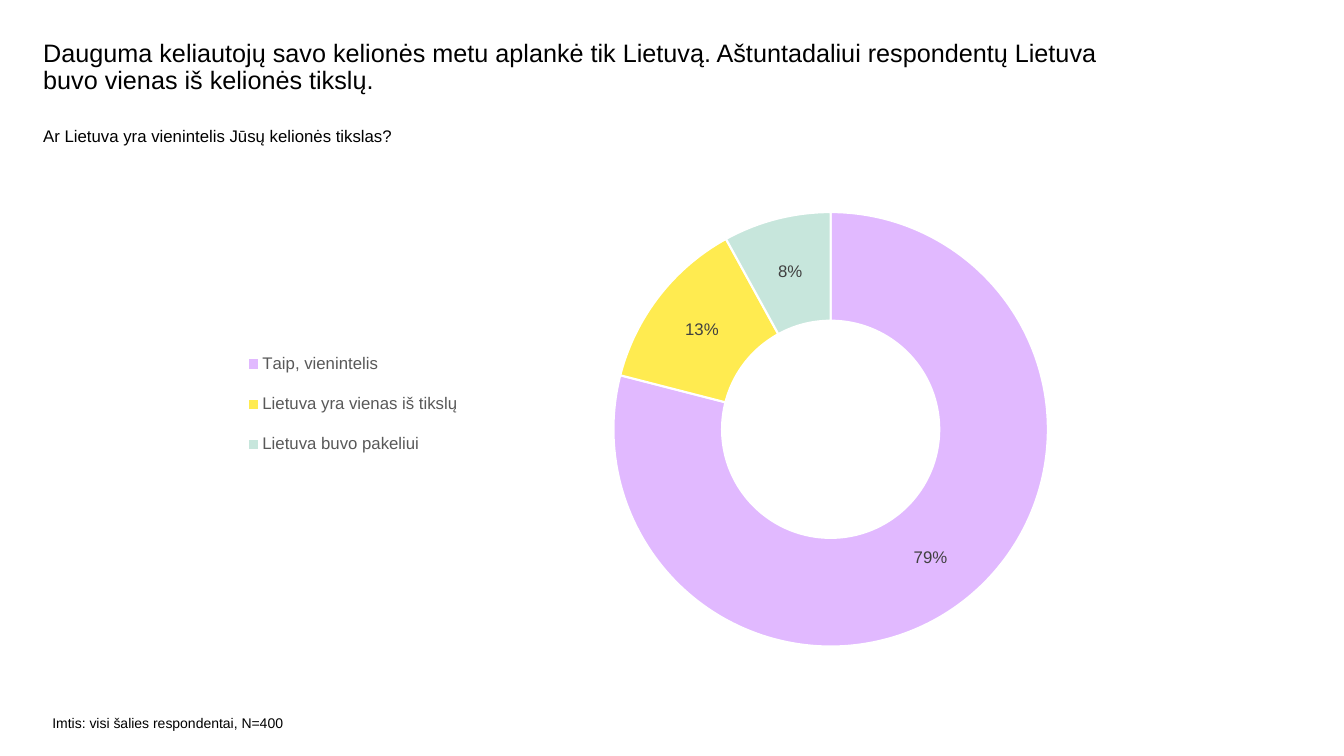
from lxml import etree
from pptx import Presentation
from pptx import util as u
from pptx.chart.data import CategoryChartData
from pptx.dml.color import RGBColor
from pptx.enum import chart as ch
from pptx.oxml.ns import qn

# Content: text, (left, top, width, height) in cm, size in points, line spacing
FONT = "Arial"
COLORS = {"text": "000000", "legend": "595959", "label": "404040", "gap": "FFFFFF"}
TEXTS = [
    ("Dauguma keliautojų savo kelionės metu aplankė tik Lietuvą. "
     "Aštuntadaliui respondentų Lietuva buvo vienas iš kelionės tikslų.",
     (1.09, 1.02, 27.64, 1.52), 18, 0.9),
    ("Ar Lietuva yra vienintelis Jūsų kelionės tikslas?",
     (1.09, 3.18, 30.2, 1.55), 12, 1.0),
    ("Imtis: visi šalies respondentai, N=400",
     (1.32, 18.01, 6.43, 0.61), 10, 1.0),
]
ANSWERS = [
    ("Taip, vienintelis", 0.79, "E1B9FF"),
    ("Lietuva yra vienas iš tikslų", 0.13, "FFEB50"),
    ("Lietuva buvo pakeliui", 0.08, "C7E6DC"),
]
CHART_BOX = (4.19, 5.03, 24.77, 11.58)
# Shares of the chart area: x, y, w, h
PLOT_LAYOUT = (0.455, 0, 0.442, 1)
LEGEND_LAYOUT = (0.075, 0.29, 0.23, 0.31)


def style(font, size, color):
    font.name = FONT
    font.size = u.Pt(size)
    font.color.rgb = RGBColor.from_string(COLORS[color])


def place(element, before, box, inner=False):
    """Give a chart part a manual layout, inserted ahead of the named tag."""
    for old in element.findall(qn("c:layout")):
        element.remove(old)
    layout = etree.Element(qn("c:layout"))
    manual = etree.SubElement(layout, qn("c:manualLayout"))
    settings = [("layoutTarget", "inner")] if inner else []
    settings += [("xMode", "edge"), ("yMode", "edge"), *zip("xywh", box)]
    for name, value in settings:
        etree.SubElement(manual, qn(f"c:{name}")).set("val", str(value))
    element.find(qn(before)).addprevious(layout)


presentation = Presentation()
presentation.slide_width = u.Cm(33.87)
presentation.slide_height = u.Cm(19.05)
slide = presentation.slides.add_slide(presentation.slide_layouts[6])

# Title, question and sample note
for content, box, size, spacing in TEXTS:
    frame = slide.shapes.add_textbox(*map(u.Cm, box)).text_frame
    frame.word_wrap = True
    frame.margin_left = frame.margin_right = frame.margin_top = frame.margin_bottom = 0
    frame.text = content
    paragraph = frame.paragraphs[0]
    paragraph.line_spacing = spacing
    style(paragraph.runs[0].font, size, "text")

# Doughnut chart
data = CategoryChartData(number_format="0%")
data.categories = [name for name, _, _ in ANSWERS]
data.add_series("Series 1", [share for _, share, _ in ANSWERS])
chart = slide.shapes.add_chart(
    ch.XL_CHART_TYPE.DOUGHNUT, *map(u.Cm, CHART_BOX), data).chart
chart.has_title = False
style(chart.font, 10, "text")

plot = chart.plots[0]
plot.vary_by_categories = True
plot._element.find(qn("c:holeSize")).set("val", "50")
series = plot.series[0]
for index, (_, _, color) in enumerate(ANSWERS):
    slice_format = series.points[index].format
    slice_format.fill.solid()
    slice_format.fill.fore_color.rgb = RGBColor.from_string(color)
    slice_format.line.color.rgb = RGBColor.from_string(COLORS["gap"])
    slice_format.line.width = u.Pt(1.5)

labels = series.data_labels
labels.show_value = True
labels.show_percentage = False
labels.number_format = "0%"
labels.number_format_is_linked = False
style(labels.font, 12, "label")

# Legend and plot positions
chart.has_legend = True
legend = chart.legend
legend.position = ch.XL_LEGEND_POSITION.BOTTOM
legend.include_in_layout = False
style(legend.font, 12, "legend")
place(legend._element, "c:overlay", LEGEND_LAYOUT)
place(plot._element.getparent(), "c:doughnutChart", PLOT_LAYOUT, inner=True)

presentation.save("out.pptx")
